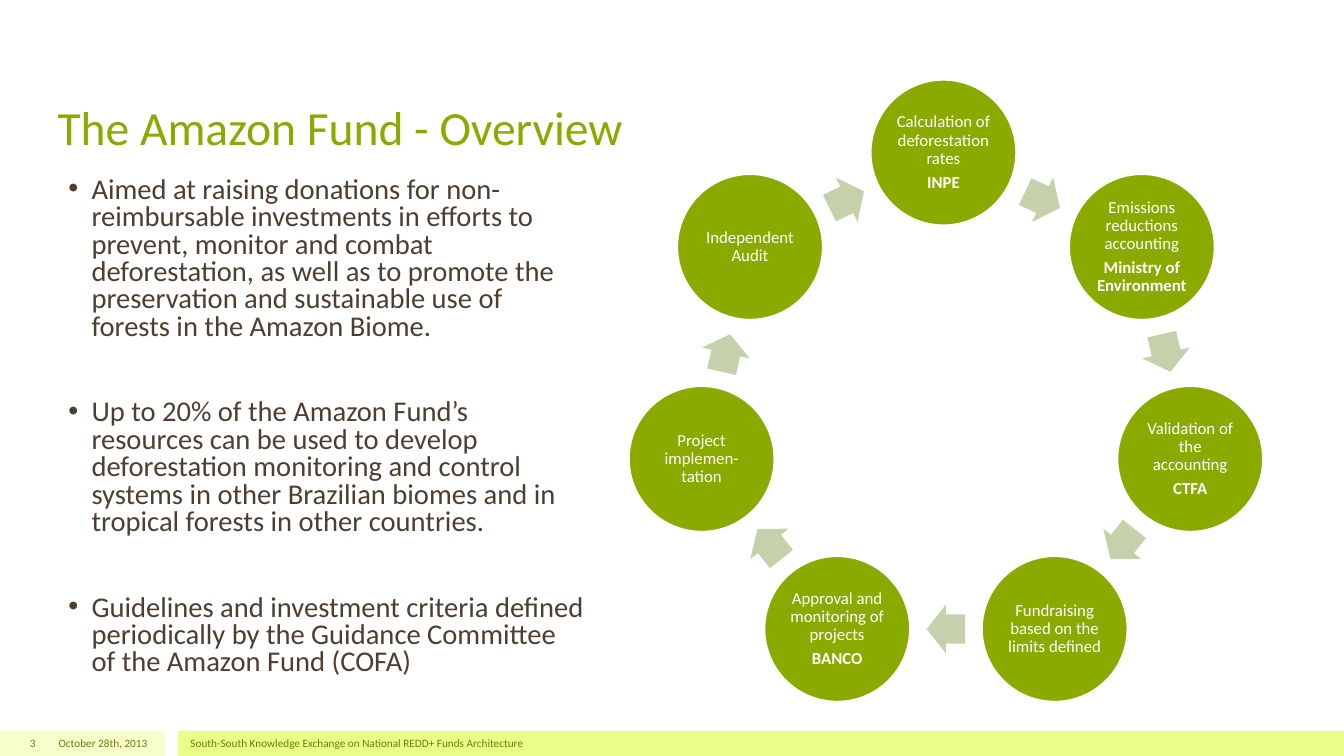
"""Build the Amazon Fund overview slide with its seven-step funding cycle."""
import math

from lxml import etree
from pptx import Presentation
from pptx.dml.color import RGBColor
from pptx.enum import shapes, text
from pptx.oxml.ns import qn
from pptx.util import Pt

GREEN = RGBColor(0x8B, 0xAA, 0x00)
DARK_GREEN = RGBColor(0x68, 0x80, 0x00)
SAGE = RGBColor(0xC4, 0xD1, 0xAB)
PALE_LIME = RGBColor(0xF6, 0xFF, 0xCC)
LIME = RGBColor(0xE9, 0xFF, 0x88)
BROWN = RGBColor(0x4D, 0x3E, 0x2F)
WHITE = RGBColor(0xFF, 0xFF, 0xFF)
LEFT, CENTER, RIGHT = text.PP_ALIGN.LEFT, text.PP_ALIGN.CENTER, text.PP_ALIGN.RIGHT
TOP, MIDDLE, BOTTOM = text.MSO_ANCHOR.TOP, text.MSO_ANCHOR.MIDDLE, text.MSO_ANCHOR.BOTTOM

deck = Presentation()
deck.slide_width, deck.slide_height = Pt(960), Pt(540)
page = deck.slides.add_slide(deck.slide_layouts[6])


def add_shape(kind, left, top, width, height, fill):
    shape = page.shapes.add_shape(kind, Pt(left), Pt(top), Pt(width), Pt(height))
    shape.shadow.inherit = False
    shape.fill.solid()
    shape.fill.fore_color.rgb = fill
    shape.line.fill.background()
    return shape


def write(shape, lines, size, color, align, anchor):
    frame = shape.text_frame
    frame.word_wrap = True
    frame.vertical_anchor = anchor
    frame.text = "\n".join(lines)
    for para in frame.paragraphs:
        para.alignment = align
        para.font.name = "Calibri"
        para.font.size = Pt(size)
        for span in para.runs:
            span.font.name = "Calibri"
            span.font.size = Pt(size)
            span.font.color.rgb = color
    return frame


for left, width, fill in [(0, 118, PALE_LIME), (127, 833, LIME)]:
    add_shape(shapes.MSO_SHAPE.RECTANGLE, left, 522, width, 18, fill)

aims = [
    "Aimed at raising donations for non-reimbursable investments in efforts to prevent, "
    "monitor and combat deforestation, as well as to promote the preservation and "
    "sustainable use of forests in the Amazon Biome.",
    "Up to 20% of the Amazon Fund’s resources can be used to develop deforestation "
    "monitoring and control systems in other Brazilian biomes and in tropical forests "
    "in other countries.",
    "Guidelines and investment criteria defined periodically by the Guidance Committee "
    "of the Amazon Fund (COFA)",
]
texts = [
    (34, 21.6, 738, 92.9, ["The Amazon Fund - Overview"], 34, GREEN, LEFT, BOTTOM),
    (34, 522, 78.5, 18, ["October 28th, 2013"], 8, DARK_GREEN, RIGHT, MIDDLE),
    (129, 522, 720, 18, ["South-South Knowledge Exchange on National REDD+ Funds Architecture"],
     8, DARK_GREEN, LEFT, MIDDLE),
    (0, 522, 32.4, 18, ["3"], 8, DARK_GREEN, RIGHT, MIDDLE),
    (41.8, 123.1, 382.3, 363.6, aims, 20.4, BROWN, LEFT, TOP),
]
for left, top, width, height, *content in texts:
    box = page.shapes.add_textbox(Pt(left), Pt(top), Pt(width), Pt(height))
    frame = write(box, *content)

for index, para in enumerate(frame.paragraphs):
    para.line_spacing = 0.8
    para.space_before = Pt(41.5 if index else 11)
    props = para._p.get_or_add_pPr()
    props.set("marL", str(Pt(16.5)))
    props.set("indent", str(Pt(-16.5)))
    etree.SubElement(props, qn("a:buFont")).set("typeface", "Arial")
    etree.SubElement(props, qn("a:buChar")).set("char", "•")
    defaults = props.find(qn("a:defRPr"))
    props.append(defaults)

steps = [
    ["Calculation of deforestation rates", "INPE"],
    ["Emissions reductions accounting", "Ministry of Environment"],
    ["Validation of the accounting", "CTFA"],
    ["Fundraising based on the limits defined"],
    ["Approval and monitoring of projects", "BANCO"],
    ["Project implemen-tation"],
    ["Independent Audit"],
]
RING_X, RING_Y, RADIUS, DIAMETER = 675.7, 288, 179, 103.7
ARROW_WIDTH, ARROW_HEIGHT = 27.5, 35
centers = []
for index in range(len(steps)):
    angle = 2 * math.pi * index / len(steps)
    nudge = 0 if index else -1.8
    centers.append((RING_X + nudge + RADIUS * math.sin(angle),
                    RING_Y - RADIUS * math.cos(angle)))

for index, (lines, (x, y)) in enumerate(zip(steps, centers)):
    circle = add_shape(shapes.MSO_SHAPE.OVAL, x - DIAMETER / 2, y - DIAMETER / 2,
                       DIAMETER, DIAMETER, GREEN)
    circle.line.color.rgb = WHITE
    circle.line.width = Pt(1)
    frame = write(circle, lines, 12, WHITE, CENTER, MIDDLE)
    frame.margin_left = frame.margin_right = Pt(1.5)
    frame.margin_top = frame.margin_bottom = Pt(1.5)
    for para in frame.paragraphs:
        para.line_spacing = 0.9
        para.space_after = Pt(4.2)
    for para in frame.paragraphs[1:]:
        para.runs[0].font.bold = True

    next_x, next_y = centers[(index + 1) % len(centers)]
    arrow = add_shape(shapes.MSO_SHAPE.RIGHT_ARROW, (x + next_x - ARROW_WIDTH) / 2,
                      (y + next_y - ARROW_HEIGHT) / 2, ARROW_WIDTH, ARROW_HEIGHT, SAGE)
    arrow.adjustments[0] = 0.6
    arrow.adjustments[1] = 0.5
    arrow.rotation = math.degrees(math.atan2(next_y - y, next_x - x)) % 360

deck.save("out.pptx")
